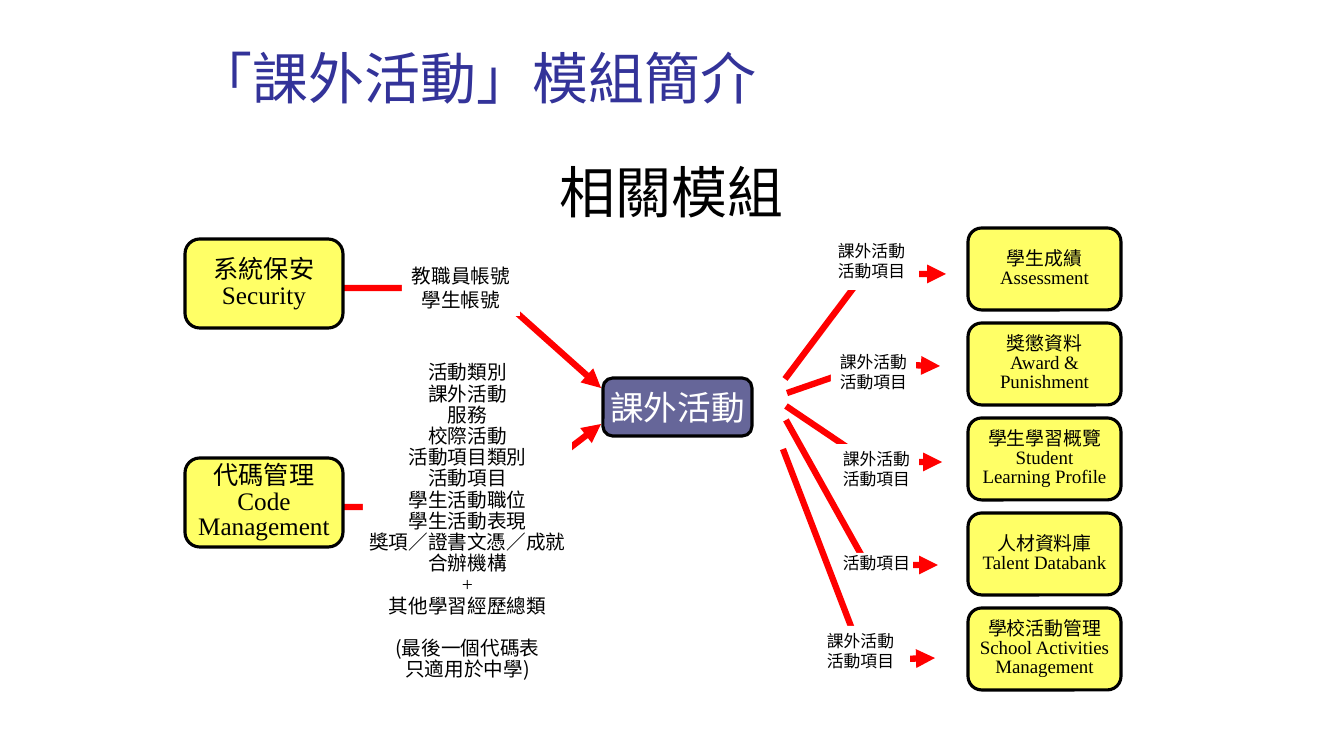
"""Build the slide that shows the modules related to the activities module."""
from lxml.etree import SubElement
from pptx import Presentation
from pptx.dml.color import RGBColor
from pptx.enum.shapes import MSO_SHAPE
from pptx.enum.text import MSO_ANCHOR, PP_ALIGN
from pptx.oxml.ns import qn
from pptx.util import Pt

SCALE = 9071
SERIF, SANS, CJK = "Times New Roman", "Lato", "Noto Sans CJK SC"
BLACK, WHITE, RED = "000000", "FFFFFF", "FF0000"
YELLOW, SLATE, NAVY = "FFFF66", "666699", "333399"

TITLE = "「課外活動」模組簡介"
HEADING = "相關模組"
HUB = "課外活動"
CODES = ["活動類別", "課外活動", "服務", "校際活動", "活動項目類別", "活動項目",
         "學生活動職位", "學生活動表現", "獎項／證書文憑／成就", "合辦機構", "+",
         "其他學習經歷總類"]
NOTE = ["(最後一個代碼表", "只適用於中學)"]
PAIR = ["課外活動", "活動項目"]

SOURCES = [
    {"name": ["代碼管理", "Code", "Management"], "top": 458,
     "route": [(343, 507), (493, 507), (601, 424)],
     "label": CODES + NOTE, "area": (363, 358, 209, 331), "space": 0.9},
    {"name": ["系統保安", "Security"], "top": 239,
     "route": [(333, 288), (489, 288), (601, 388)],
     "label": ["教職員帳號", "學生帳號"], "area": (402, 259, 118, 57), "space": 1},
]
TARGETS = [
    {"name": ["學生成績", "Assessment"], "label": PAIR,
     "route": [(785, 379), (864, 274), (946, 274)], "area": (824, 236, 95, 54)},
    {"name": ["獎懲資料", "Award &", "Punishment"], "label": PAIR,
     "route": [(787, 393), (871, 364), (940, 366)], "area": (831, 347, 85, 54)},
    {"name": ["學生學習概覽", "Student", "Learning Profile"], "label": PAIR,
     "route": [(786, 406), (869, 462), (942, 462)], "area": (834, 444, 85, 54)},
    {"name": ["人材資料庫", "Talent Databank"], "label": ["活動項目"],
     "route": [(786, 420), (867, 565), (938, 565)], "area": (840, 553, 73, 22)},
    {"name": ["學校活動管理", "School Activities", "Management"], "label": PAIR,
     "route": [(783, 449), (864, 660), (935, 658)], "area": (811, 626, 99, 51)},
]

deck = Presentation()
deck.slide_width, deck.slide_height = 1344 * SCALE, 756 * SCALE
shapes = deck.slides.add_slide(deck.slide_layouts[6]).shapes


def paint(color):
    return RGBColor.from_string(color)


def emu(area):
    return [size * SCALE for size in area]


def write(shape, lines, size, color=BLACK, font=SERIF, space=1, side=0,
          align=PP_ALIGN.CENTER, anchor=MSO_ANCHOR.TOP):
    frame = shape.text_frame
    frame.text = "\n".join(lines)
    frame.word_wrap = True
    frame.vertical_anchor = anchor
    frame.margin_left = frame.margin_right = side * SCALE
    frame.margin_top = frame.margin_bottom = 5 * SCALE
    for line in frame.paragraphs:
        line.alignment = align
        line.line_spacing = space
        for run in line.runs:
            run.font.name = font
            run.font.size = Pt(size)
            run.font.color.rgb = paint(color)
    return frame.paragraphs


def block(area, kind, fill):
    shape = shapes.add_shape(kind, *emu(area))
    shape.shadow.inherit = False
    shape.fill.solid()
    shape.fill.fore_color.rgb = paint(fill)
    return shape


def module(area, lines, size, fill=YELLOW, color=BLACK, space=0.85):
    shape = block(area, MSO_SHAPE.ROUNDED_RECTANGLE, fill)
    shape.line.color.rgb = paint(BLACK)
    shape.line.width = Pt(2.25)
    write(shape, lines, size, color, space=space, anchor=MSO_ANCHOR.MIDDLE)


def label(area, lines, size, space=1):
    shape = block(area, MSO_SHAPE.RECTANGLE, WHITE)
    shape.line.fill.background()
    return write(shape, lines, size, space=space)


def arrow(route):
    pen = shapes.build_freeform(*route[0], scale=SCALE)
    pen.add_line_segments(route[1:], close=False)
    shape = pen.convert_to_shape()
    shape.shadow.inherit = False
    shape.fill.background()
    shape.line.color.rgb = paint(RED)
    shape.line.width = Pt(4.5)
    SubElement(shape.line._get_or_add_ln(), qn("a:tailEnd"), type="triangle")


heading = shapes.add_textbox(*emu((187, 152, 969, 78)))
write(heading, [HEADING], 40, font=SANS)
title = shapes.add_textbox(*emu((187, 5, 969, 111)))
write(title, [TITLE], 40, NAVY, SANS, space=1.5, side=10, align=PP_ALIGN.LEFT)

for item in SOURCES:
    arrow(item["route"])
    module((185, item["top"], 158, 89), item["name"], 18)
    lines = label(item["area"], item["label"], 14, item["space"])
    if item["label"][-2:] == NOTE:
        lines[-2].space_before = Pt(15)
        for line in lines[-2:]:
            line.runs[0].font.name = CJK

module((603, 378, 149, 58), [HUB], 24, SLATE, WHITE, space=1)

for item in TARGETS:
    arrow(item["route"])
for row, item in enumerate(TARGETS):
    module((968, 228 + 95 * row, 153, 82), item["name"], 13.5)
    label(item["area"], item["label"], 12, 1 if len(item["label"]) > 1 else 0.7)

deck.save("out.pptx")
